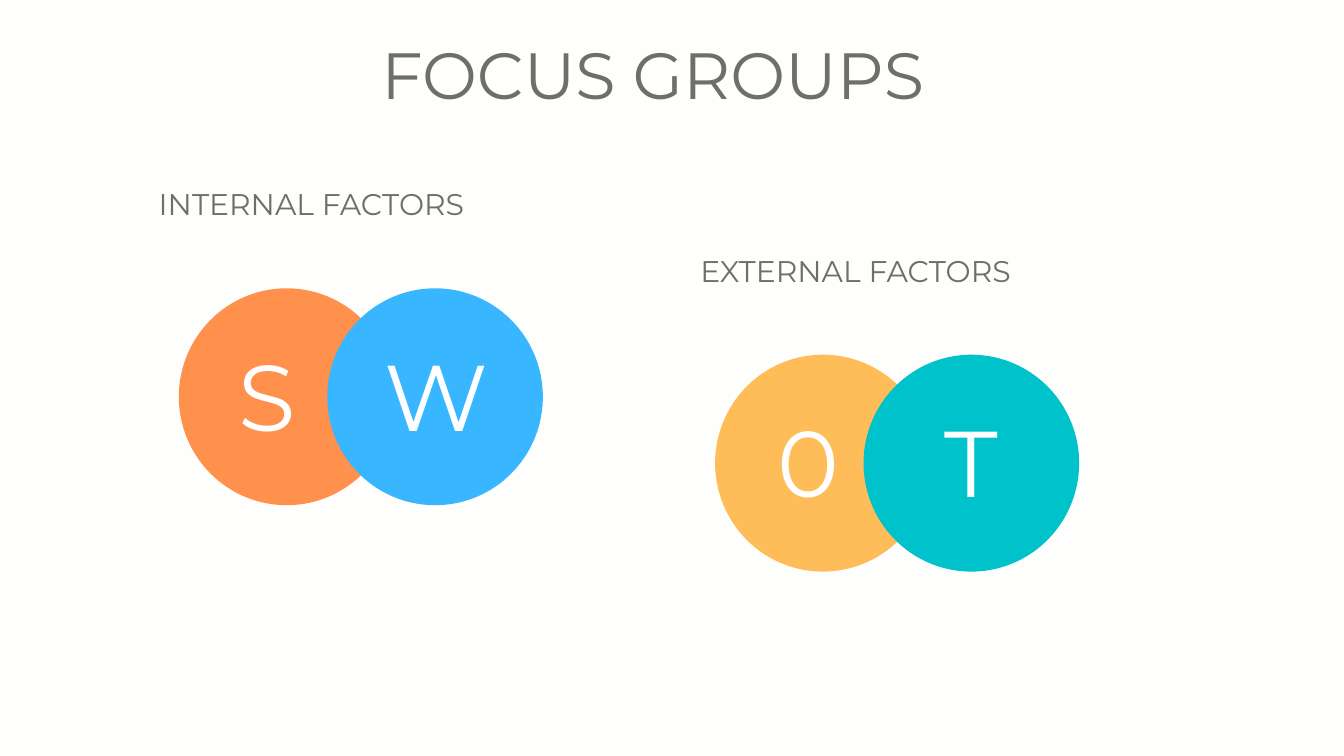
from pptx import Presentation
from pptx.dml.color import RGBColor
from pptx.enum.shapes import MSO_SHAPE
from pptx.enum.text import PP_ALIGN
from pptx.util import Cm, Pt

BACKGROUND = RGBColor(0xFE, 0xFE, 0xFD)
GRAY = RGBColor(0x6F, 0x6F, 0x69)
WHITE = RGBColor(0xFF, 0xFF, 0xFF)
ORANGE = RGBColor(0xFF, 0x91, 0x4D)
BLUE = RGBColor(0x38, 0xB6, 0xFF)
YELLOW = RGBColor(0xFF, 0xBD, 0x59)
TEAL = RGBColor(0x00, 0xC2, 0xCB)
FONT = "Montserrat"

# Content: heading, its left edge, the pair's left and top,
# then letter, colour and letter inset for each circle (cm)
TITLE = "FOCUS GROUPS"
GROUPS = [
    ("INTERNAL FACTORS", 6.0, 6.76, 10.9,
     [("S", ORANGE, 1.85), ("W", BLUE, 2.18)]),
    ("EXTERNAL FACTORS", 26.47, 27.03, 13.41,
     [("0", YELLOW, 2.03), ("T", TEAL, 2.57)]),
]

# Layout (cm)
CIRCLE_W, CIRCLE_H = 8.15, 8.2
CIRCLE_STEP = 5.61
HEADING_RISE = 3.69
LETTER_DROP = 2.44


def add_text(s, text, x, y, w, h, size, spacing, color, align):
    tf = s.shapes.add_textbox(Cm(x), Cm(y), Cm(w), Cm(h)).text_frame
    tf.word_wrap = True
    tf.margin_left = tf.margin_top = tf.margin_right = tf.margin_bottom = 0
    p = tf.paragraphs[0]
    p.alignment = align
    p.line_spacing = Pt(spacing)
    r = p.add_run()
    r.text = text
    r.font.name = FONT
    r.font.size = Pt(size)
    r.font.color.rgb = color


def add_circle(s, x, y, color):
    sp = s.shapes.add_shape(MSO_SHAPE.OVAL, Cm(x), Cm(y), Cm(CIRCLE_W), Cm(CIRCLE_H))
    sp.shadow.inherit = False
    sp.fill.solid()
    sp.fill.fore_color.rgb = color
    sp.line.fill.background()


def main():
    prs = Presentation()
    prs.slide_width, prs.slide_height = Cm(50.8), Cm(28.58)
    s = prs.slides.add_slide(prs.slide_layouts[6])
    s.background.fill.solid()
    s.background.fill.fore_color.rgb = BACKGROUND

    add_text(s, TITLE, 6.71, 1.68, 35.92, 2.67, 70, 72.8, GRAY, PP_ALIGN.CENTER)

    # Each group: a heading above two overlapping lettered circles
    for heading, heading_x, left, top, circles in GROUPS:
        add_text(s, heading, heading_x, top - HEADING_RISE, 14.17, 1.24,
                 32, 33.2, GRAY, PP_ALIGN.LEFT)
        for i, (letter, color, inset) in enumerate(circles):
            x = left + i * CIRCLE_STEP
            add_circle(s, x, top, color)
            add_text(s, letter, x + inset, top + LETTER_DROP, 3, 3.89,
                     100, 104, WHITE, PP_ALIGN.CENTER)

    prs.save("out.pptx")


if __name__ == "__main__":
    main()
